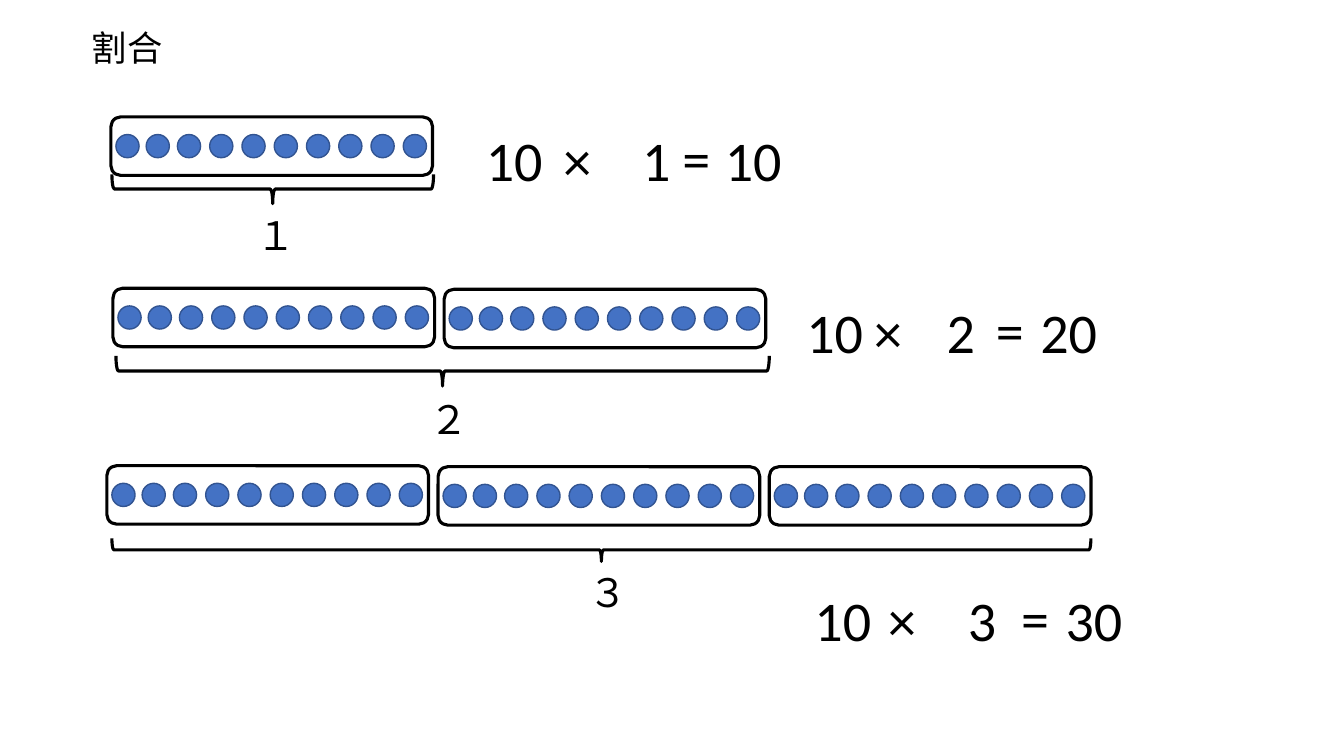
import pptx
import pptx.util
from dataclasses import dataclass
from pptx.dml.color import RGBColor
from pptx.enum.shapes import MSO_SHAPE
from pptx.enum.text import MSO_ANCHOR, MSO_AUTO_SIZE, PP_ALIGN
from pptx.util import Inches


@dataclass(frozen=True)
class Theme:
    font: str = "Calibri"
    ink: RGBColor = RGBColor(0x00, 0x00, 0x00)
    dot_fill: RGBColor = RGBColor(0x44, 0x72, 0xC4)
    dot_line: RGBColor = RGBColor(0x32, 0x54, 0x91)
    title_size: float = 25.2
    count_size: float = 28
    equation_size: float = 40
    dot_line_width: float = 1
    outline_width: float = 2.25


theme = Theme()


def add_outline(shapes, kind, left, top, width, height, fill=None):
    """Add a dot when a fill is given, otherwise an unfilled black outline."""
    shape = shapes.add_shape(kind, Inches(left), Inches(top), Inches(width), Inches(height))
    shape.shadow.inherit = False
    if fill is None:
        shape.fill.background()
    else:
        shape.fill.solid()
        shape.fill.fore_color.rgb = fill
    shape.line.color.rgb = theme.ink if fill is None else theme.dot_line
    shape.line.width = pptx.util.Pt(theme.outline_width if fill is None else theme.dot_line_width)
    return shape


def add_text(shapes, text, size, left, top, width, height, title=None):
    """Write one run in a new text box, or in the title placeholder."""
    box = title or shapes.add_textbox(0, 0, 0, 0)
    box.left, box.top = Inches(left), Inches(top)
    box.width, box.height = Inches(width), Inches(height)
    box.text_frame.word_wrap = True
    box.text_frame.auto_size = MSO_AUTO_SIZE.NONE if title else MSO_AUTO_SIZE.SHAPE_TO_FIT_TEXT
    run = box.text_frame.paragraphs[0].add_run()
    run.text = text
    run.font.name = theme.font
    run.font.size = pptx.util.Pt(size)
    run.font.color.rgb = theme.ink
    return box


presentation = pptx.Presentation()
presentation.slide_width = Inches(13.33)
presentation.slide_height = Inches(7.5)
slide = presentation.slides.add_slide(presentation.slide_layouts[5])

# Title
title = add_text(slide.shapes, "割合", theme.title_size, 0.48, 0.23, 1.56, 0.51, slide.shapes.title)
title.text_frame.vertical_anchor = MSO_ANCHOR.BOTTOM
title.text_frame.paragraphs[0].alignment = PP_ALIGN.CENTER
title.text_frame.paragraphs[0].line_spacing = 0.9

# Boxes of ten dots: left and top of the first box in each row
box_width, box_height, box_pitch = 3.19, 0.58, 3.285
dot_size, dot_drop = 0.23, 0.175
dot_offsets = [0.05, 0.35] + [0.66 + 0.32 * step for step in range(8)]
rows = [(1.10, 1.16), (1.12, 2.86), (1.06, 4.62)]
for box_count, (row_left, row_top) in enumerate(rows, start=1):
    for index in range(box_count):
        left = row_left + index * box_pitch
        top = row_top + (0.01 if index else 0)
        group = slide.shapes.add_group_shape()
        for offset in dot_offsets:
            add_outline(group.shapes, MSO_SHAPE.OVAL, left + offset, top + dot_drop,
                        dot_size, dot_size, theme.dot_fill)
        add_outline(group.shapes, MSO_SHAPE.ROUNDED_RECTANGLE, left, top, box_width, box_height)

# Braces turned to point down: left, top, depth, length before rotation
braces = [(2.56, 0.28, 0.29, 3.19), (4.24, 0.44, 0.30, 6.48), (5.85, 0.60, 0.23, 9.71)]
for brace_place in braces:
    brace = add_outline(slide.shapes, MSO_SHAPE.LEFT_BRACE, *brace_place)
    brace.rotation = 270

# Counts under the braces
for count, left, top in [("１", 2.45, 2.05), ("２", 4.16, 3.87), ("３", 5.74, 5.59)]:
    add_text(slide.shapes, count, theme.count_size, left, top, 0.51, 0.57)

# Equations: top, then each term with its left edge
equations = [
    (1.20, [("10", 4.72), ("×", 5.49), ("1", 6.27), ("=", 6.67), ("10", 7.09)]),
    (2.90, [("10", 7.90), ("×", 8.57), ("2", 9.29), ("=", 9.78), ("20", 10.22)]),
    (5.76, [("10", 7.98), ("×", 8.71), ("3", 9.50), ("=", 10.03), ("30", 10.47)]),
]
for top, terms in equations:
    group = slide.shapes.add_group_shape()
    for term, left in terms:
        add_text(group.shapes, term, theme.equation_size, left,
                 top - (0.02 if term == "=" else 0), 1.3 if len(term) == 2 else 0.75, 0.77)

presentation.save("out.pptx")
